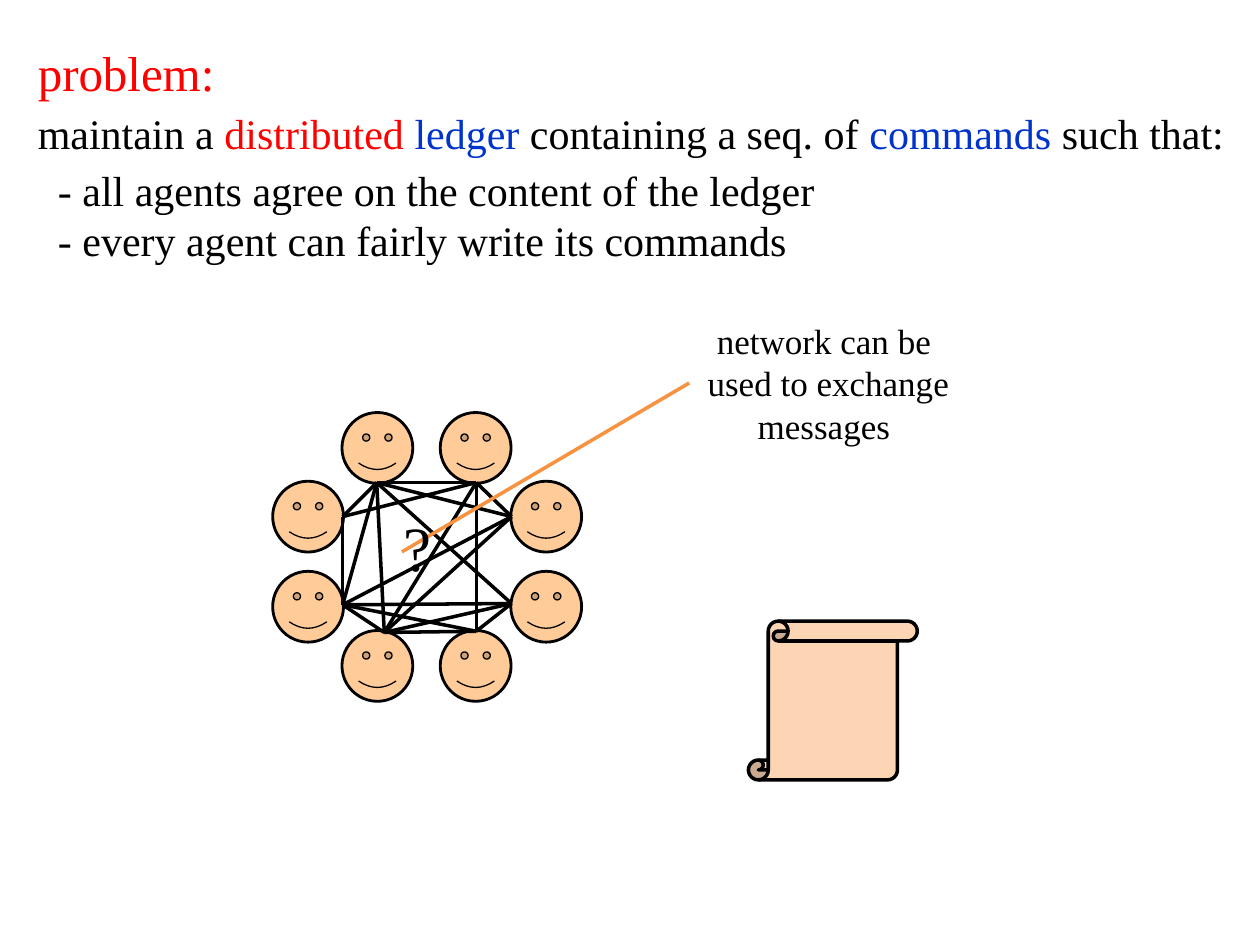
import pptx
import pptx.util
import pptx.dml.color
import pptx.enum.shapes
import pptx.enum.text
import pptx.oxml

Pt = pptx.util.Pt
Kind = pptx.enum.shapes.MSO_SHAPE
Align = pptx.enum.text.PP_ALIGN

THEME = {
    "font": "Times New Roman",
    "ink": "000000", "red": "FF0000", "blue": "0033CC", "white": "FFFFFF",
    "skin": "FFCC99", "paper": "FCD5B5", "beam": "F69240",
    "head": 28, "body": 24, "note": 20, "mark": 36,
    "ring": 2.5, "face": 0.75, "link": 2,
}

COLS, ROWS = 100, 75

TITLE = [[("problem:", "red")]]
BODY = [
    [("maintain a ", "ink"), ("distributed ", "red"), ("ledger", "blue"),
     (" containing a seq. of ", "ink"), ("commands", "blue"), (" such that:", "ink")],
    [("- all agents agree on the content of the ledger", "ink")],
    [("- every agent can fairly write its commands", "ink")],
]
NOTE = [[("network can be", "ink")], [(" used to exchange messages", "ink")]]
MARK = [[("?", "ink")]]

SIZE = 5.5
FACE_X = (21.7, 27.2, 35, 40.6)
FACE_Y = (32.8, 38.25, 45.4, 50.1)
AGENTS = [(1, 0), (2, 0), (3, 1), (3, 2), (2, 3), (1, 3), (0, 2), (0, 1)]
PORTS = {
    "a": (29.9, 38.3), "b": (37.8, 38.3), "c": (40.6, 41), "d": (40.6, 47.9),
    "e": (37.8, 50.1), "f": (30.5, 50.2), "g": (27.2, 48), "h": (27.2, 41),
}
LINKS = "gh ca da fa ab fe bc ed ha ga fd fc fb fg cg dg eb bh ge".split()

deck = pptx.Presentation()
deck.slide_width, deck.slide_height = pptx.util.Inches(10), pptx.util.Inches(7.5)
slide = deck.slides.add_slide(deck.slide_layouts[1])
shapes = slide.shapes


def span(*cells):
    units = (deck.slide_width / COLS, deck.slide_height / ROWS)
    return [round(cell * units[i % 2]) for i, cell in enumerate(cells)]


def tint(name):
    return pptx.dml.color.RGBColor.from_string(THEME[name])


def apply(item, style):
    for key, value in style.items():
        setattr(item, key, value)


def write(box, at, lines, size, align, wrap=True):
    apply(box, dict(zip(("left", "top", "width", "height"), span(*at))))
    frame = box.text_frame
    apply(frame, {"word_wrap": wrap,
                  "auto_size": pptx.enum.text.MSO_AUTO_SIZE.NONE,
                  "vertical_anchor": pptx.enum.text.MSO_ANCHOR.TOP})
    for i, line in enumerate(lines):
        para = frame.add_paragraph() if i else frame.paragraphs[0]
        apply(para, {"alignment": align, "space_before": Pt(0)})
        for text, hue in line:
            run = para.add_run()
            run.text = text
            apply(run.font, {"name": THEME["font"], "size": Pt(THEME[size])})
            run.font.color.rgb = tint(hue)
    return frame.paragraphs


def label(at, lines, size):
    write(shapes.add_textbox(0, 0, 0, 0), at, lines, size, Align.CENTER)


def draw(kind, at, fill, width):
    shape = shapes.add_shape(kind, *span(*at))
    shape.shadow.inherit = False
    shape.fill.solid()
    shape.fill.fore_color.rgb = tint(fill)
    shape.line.color.rgb = tint("ink")
    shape.line.width = Pt(THEME[width])
    return shape


def link(start, end, hue):
    line = shapes.add_connector(pptx.enum.shapes.MSO_CONNECTOR.STRAIGHT,
                                *span(*start, *end))
    line.line.color.rgb = tint(hue)
    line.line.width = Pt(THEME["link"])
    line._element.spPr.append(pptx.oxml.parse_xml(
        '<a:effectLst xmlns:a="http://schemas.openxmlformats.org/drawingml/2006/main"/>'))


write(shapes.title, (2, 2.9, 16.2, 5.7), TITLE, "head", Align.LEFT, False)
paras = write(slide.placeholders[1], (2, 8, 97.6, 13.2), BODY, "body", Align.LEFT)
for i, para in enumerate(paras):
    props = para._p.get_or_add_pPr()
    props.set("marL", str(span(1.6 if i else 0)[0]))
    props.set("indent", "0")
    props.append(props.makeelement(
        "{http://schemas.openxmlformats.org/drawingml/2006/main}buNone", {}))
paras[1].space_before = Pt(4)

spots = [(FACE_X[col], FACE_Y[row], SIZE, SIZE) for col, row in AGENTS]
for spot in spots:
    draw(Kind.OVAL, spot, "white", "ring")
for spot in spots:
    draw(Kind.SMILEY_FACE, spot, "skin", "face").adjustments[0] = 0.05
for start, end in LINKS:
    link(PORTS[start], PORTS[end], "ink")

label((51.6, 24.9, 27.6, 11.1), NOTE, "note")
link((31.9, 43.8), (54.7, 30.4), "beam")
draw(Kind.VERTICAL_SCROLL, (59.4, 49.3, 13.4, 12.6), "paper", "link")
label((28, 39.9, 10.2, 7.1), MARK, "mark")

deck.save("out.pptx")
